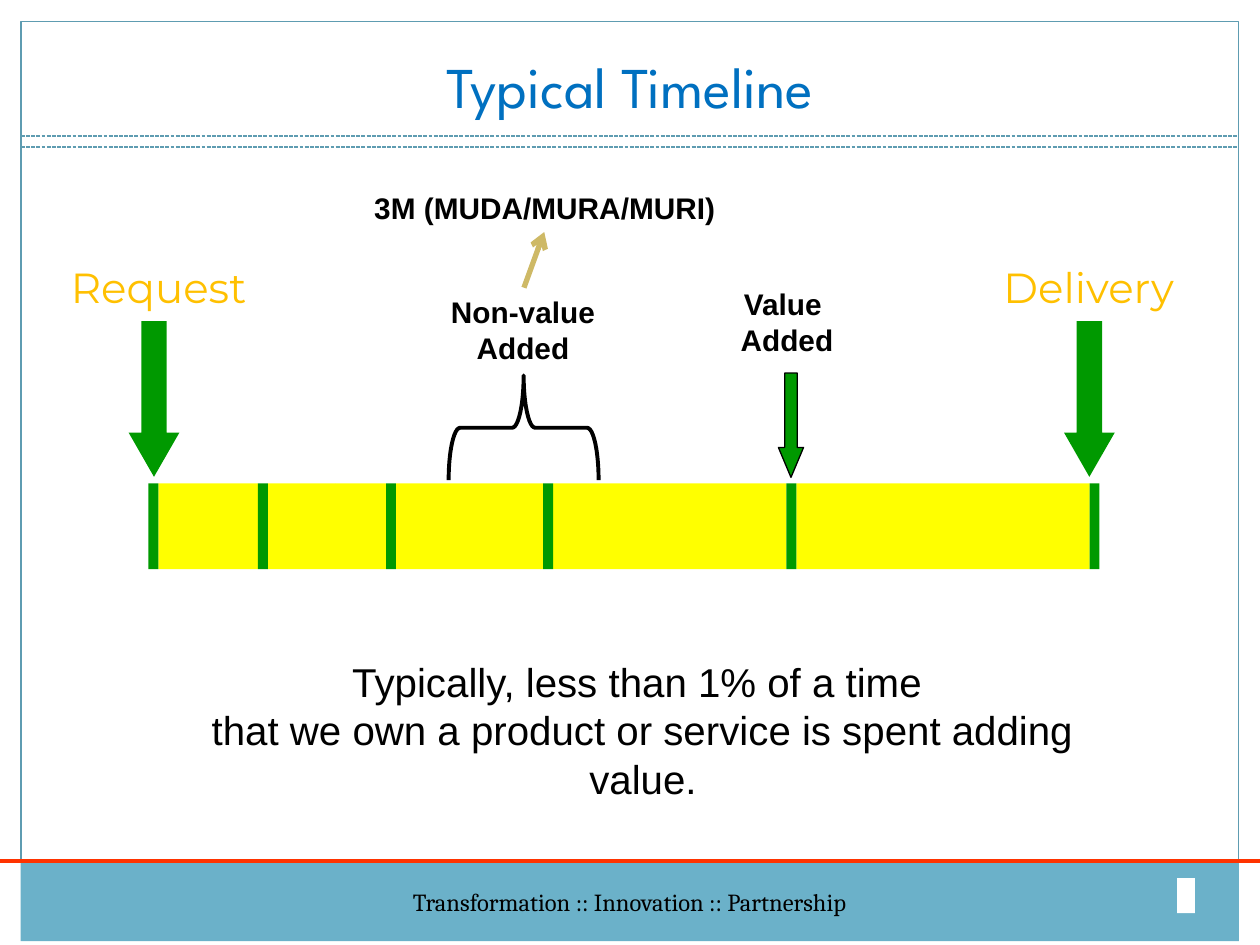
from dataclasses import dataclass

import pptx
import pptx.dml.color
import pptx.enum.dml
import pptx.enum.shapes
import pptx.enum.text
import pptx.oxml.ns
import pptx.util
from lxml import etree

Pt = pptx.util.Pt
SHAPES = pptx.enum.shapes.MSO_SHAPE
ANCHORS = pptx.enum.text.MSO_ANCHOR
DASHES = pptx.enum.dml.MSO_LINE

BLACK, WHITE = "000000", "FFFFFF"
TEAL, FOOTER_BLUE, RED = "5E9CB1", "6BB1C9", "FF3300"
YELLOW, GREEN, GOLD, TAN, BLUE = "FFFF00", "009900", "FFC000", "CEB966", "0070C0"


@dataclass(frozen=True)
class Box:
    left: float
    top: float
    width: float
    height: float

    def points(self) -> tuple:
        return Pt(self.left), Pt(self.top), Pt(self.width), Pt(self.height)


@dataclass(frozen=True)
class Label:
    box: Box
    text: str
    size: float
    font: str = "Arial"
    color: str = BLACK
    bold: bool = False
    wrap: bool = False
    anchor: ANCHORS = ANCHORS.TOP


@dataclass(frozen=True)
class Arrow:
    box: Box
    head: float
    outline: str | None = None


def paint(target, color: str) -> None:
    target.rgb = pptx.dml.color.RGBColor.from_string(color)


def add_outline(shape, color: str, width: float) -> None:
    paint(shape.line.color, color)
    shape.line.width = Pt(width)


def add_block(slide, kind, box: Box, fill=None, line=None, width=0.75, adjust=()):
    block = slide.shapes.add_shape(kind, *box.points())
    block.shadow.inherit = False
    if fill:
        block.fill.solid()
        paint(block.fill.fore_color, fill)
    else:
        block.fill.background()
    if line:
        add_outline(block, line, width)
    else:
        block.line.fill.background()
    for index, value in enumerate(adjust):
        block.adjustments[index] = value
    return block


def add_line(slide, start: tuple, end: tuple, color: str, width=0.75, dash=None, arrow=False):
    line = slide.shapes.add_connector(
        pptx.enum.shapes.MSO_CONNECTOR.STRAIGHT, *(Pt(v) for v in start + end))
    add_outline(line, color, width)
    if dash:
        line.line.dash_style = dash
    if arrow:
        etree.SubElement(line.line._get_or_add_ln(), pptx.oxml.ns.qn("a:tailEnd"), type="arrow")
    etree.SubElement(line._element.spPr, pptx.oxml.ns.qn("a:effectLst"))


def write(shape, text: str, *, size, font="Arial", color=BLACK, bold=False,
          wrap=False, anchor=ANCHORS.TOP) -> None:
    frame = shape.text_frame
    frame.word_wrap = wrap
    frame.vertical_anchor = anchor
    if not wrap:
        # Leave the full box width to single-line labels
        frame.margin_left = frame.margin_right = Pt(0)
    frame.text = text
    for paragraph in frame.paragraphs:
        paragraph.alignment = pptx.enum.text.PP_ALIGN.CENTER
        paragraph.font.size = Pt(size)
        paragraph.font.name = font
        paragraph.font.bold = bold
        paint(paragraph.font.color, color)


def add_label(slide, label: Label) -> None:
    write(slide.shapes.add_textbox(*label.box.points()), label.text, size=label.size,
          font=label.font, color=label.color, bold=label.bold, wrap=label.wrap,
          anchor=label.anchor)


# Timeline bar: spans between the ticks, two of them split
BAR_TOP, BAR_HEIGHT, TICK_WIDTH = 276.2, 49, 5.7
TICKS = [84.8, 147.4, 220.6, 310.4, 449.4, 622.6]
SPLITS = {1: 192, 4: 514.8}

ARROWS = [
    Arrow(Box(73.5, 183.5, 29, 89), 0.87),
    Arrow(Box(608, 183.5, 29, 89), 0.87),
    Arrow(Box(444.8, 213.2, 14.4, 59.6), 1.19, BLACK),
]

LABELS = [
    Label(Box(35.6, 145.8, 110, 32), "Request", 24, "Montserrat", GOLD),
    Label(Box(554.4, 145.8, 135.4, 32), "Delivery", 24, "Montserrat", GOLD),
    Label(Box(250.6, 164.2, 96.5, 48.2), "Non-value\nAdded", 17, bold=True),
    Label(Box(416.2, 159.8, 67, 48.2), "Value \nAdded", 17, bold=True),
    Label(Box(206.6, 105.1, 209.5, 27.4), "3M (MUDA/MURA/MURI)", 17, bold=True),
    Label(Box(83.5, 372.2, 568, 90.7),
          "Typically, less than 1% of a time \n"
          "that we own a product or service is spent adding value.", 23, wrap=True),
    Label(Box(24, 18, 672, 54), "Typical Timeline", 33, "League Spartan", BLUE,
          wrap=True, anchor=ANCHORS.BOTTOM),
]


def add_frame(slide) -> None:
    footer = add_block(slide, SHAPES.RECTANGLE, Box(11.8, 492.5, 696.2, 45.4), FOOTER_BLUE)
    write(footer, "Transformation :: Innovation :: Partnership", size=14, font="Cambria",
          anchor=ANCHORS.MIDDLE)
    add_block(slide, SHAPES.RECTANGLE, Box(12, 12.2, 695.6, 480.3), line=TEAL)
    add_block(slide, SHAPES.RECTANGLE, Box(672.6, 501.8, 10.2, 20), WHITE)
    for y in (77.8, 84):
        add_line(slide, (12, y), (707.6, y), TEAL, dash=DASHES.SQUARE_DOT)
    add_line(slide, (0, 492), (720, 492), RED, 2)


def add_timeline(slide) -> None:
    for index, (tick, following) in enumerate(zip(TICKS, TICKS[1:])):
        edges = [tick + TICK_WIDTH, following]
        if index in SPLITS:
            edges.insert(1, SPLITS[index])
        for left, right in zip(edges, edges[1:]):
            add_block(slide, SHAPES.RECTANGLE,
                      Box(left, BAR_TOP, right - left, BAR_HEIGHT), YELLOW)
    for tick in TICKS:
        add_block(slide, SHAPES.RECTANGLE, Box(tick, BAR_TOP, TICK_WIDTH, BAR_HEIGHT), GREEN)
    for arrow in ARROWS:
        add_block(slide, SHAPES.DOWN_ARROW, arrow.box, GREEN, arrow.outline,
                  adjust=(0.5, arrow.head))
    brace = add_block(slide, SHAPES.LEFT_BRACE, Box(269.3, 201.6, 59.8, 85.7), line=BLACK,
                      width=2.25, adjust=(0.11, 0.5))
    brace.rotation = 90


def main() -> None:
    deck = pptx.Presentation()
    deck.slide_width, deck.slide_height = Pt(720), Pt(540)
    slide = deck.slides.add_slide(deck.slide_layouts[6])
    add_frame(slide)
    add_timeline(slide)
    for label in LABELS:
        add_label(slide, label)
    # Pointer from the non-value time to its causes
    add_line(slide, (299.4, 164.4), (311, 132.6), TAN, 3, arrow=True)
    deck.save("out.pptx")


if __name__ == "__main__":
    main()
